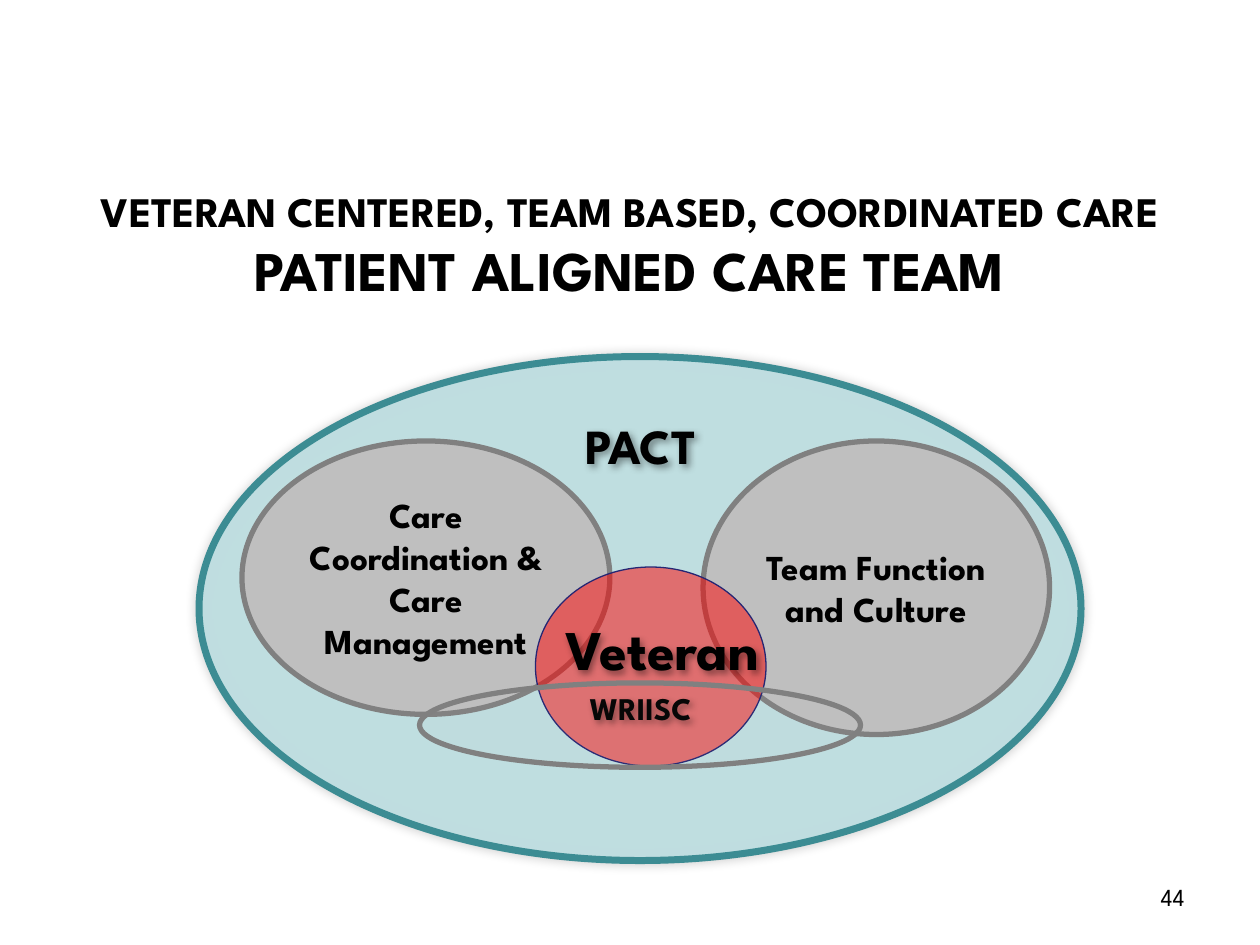
from lxml import etree
from pptx import Presentation
from pptx.dml.color import RGBColor
from pptx.enum import shapes, text
from pptx.oxml import ns
from pptx.util import Inches, Pt

FONT = "League Spartan"
BLACK = RGBColor(0x00, 0x00, 0x00)
PALE_TEAL = RGBColor(0xBB, 0xE0, 0xE3)
TEAL = RGBColor(0x3C, 0x8C, 0x93)
SILVER = RGBColor(0xBF, 0xBF, 0xBF)
GRAY = RGBColor(0x80, 0x80, 0x80)
RED = RGBColor(0xFF, 0x00, 0x00)
NAVY = RGBColor(0x26, 0x26, 0x73)


def set_all(target, values):
    for name, value in values.items():
        setattr(target, name, value)


def write(shape, lines, anchor, align=text.PP_ALIGN.CENTER, bold=True):
    frame = shape.text_frame
    set_all(frame, {"word_wrap": True, "vertical_anchor": anchor,
                    "auto_size": text.MSO_AUTO_SIZE.NONE})
    for index, (words, size) in enumerate(lines):
        para = frame.add_paragraph() if index else frame.paragraphs[0]
        set_all(para, {"alignment": align, "space_before": Pt(0)})
        span = para.add_run()
        span.text = words
        set_all(span.font, {"name": FONT, "size": Pt(size), "bold": bold})
        span.font.color.rgb = BLACK


def add_alpha(color, percent):
    etree.SubElement(color, ns.qn("a:alpha"), val=str(percent * 1000))


def add_soft_shadow(shape, alpha, blur, distance=0, angle=0):
    shape.shadow.inherit = False
    effects = shape._element.spPr.find(ns.qn("a:effectLst"))
    shadow = etree.SubElement(
        effects, ns.qn("a:outerShdw"), blurRad=str(Pt(blur)),
        dist=str(Pt(distance)), dir=str(angle * 60000), rotWithShape="0")
    color = etree.SubElement(shadow, ns.qn("a:srgbClr"), val=str(BLACK))
    add_alpha(color, alpha)


def add_ellipse(page, box, fill, line, width, alpha=100):
    ellipse = page.shapes.add_shape(shapes.MSO_SHAPE.OVAL, *map(Inches, box))
    ellipse.shadow.inherit = False
    ellipse.fill.solid()
    ellipse.fill.fore_color.rgb = fill
    if alpha < 100:
        add_alpha(ellipse._element.spPr.find(".//" + ns.qn("a:srgbClr")), alpha)
    ellipse.line.color.rgb = line
    ellipse.line.width = Pt(width)
    return ellipse


def add_label(page, box, words, size):
    label = page.shapes.add_textbox(*map(Inches, box))
    write(label, [(words, size)], text.MSO_ANCHOR.TOP)
    add_soft_shadow(label, 40, 4, 2, 45)


def place_title(page, left, top, width, height):
    title = page.shapes.title
    set_all(title, {"left": Inches(left), "top": Inches(top),
                    "width": Inches(width), "height": Inches(height)})
    write(title, [("VETERAN CENTERED, TEAM BASED, COORDINATED CARE", 24),
                  ("PATIENT ALIGNED CARE TEAM", 32)], text.MSO_ANCHOR.TOP)


def draw_care_diagram(page, left, top, width, height):
    def inside(x, y, w, h):
        return left + x, top + y, w, h

    team = add_ellipse(page, (left, top, width, height), PALE_TEAL, TEAL, 4, 83)
    add_soft_shadow(team, 20, 6)
    for box, words in (
            (inside(4, 0.67, 2.75, 2.33), "Team Function and Culture"),
            (inside(0.34, 0.67, 2.92, 2.17),
             "Care Coordination & Care Management")):
        circle = add_ellipse(page, box, SILVER, GRAY, 3)
        write(circle, [(words, 20)], text.MSO_ANCHOR.MIDDLE)
    add_ellipse(page, inside(2.67, 1.67, 1.83, 1.58), RED, NAVY, 0.75, 50)
    for x, y, h, words, size in ((1.59, 2, 0.64, "Veteran", 32),
                                 (1.42, 2.59, 0.4, "WRIISC", 18),
                                 (1.42, 0.42, 0.57, "PACT", 28)):
        add_label(page, inside(x, y, 4.17, h), words, size)
    add_ellipse(page, inside(1.75, 2.59, 3.5, 0.67), SILVER, GRAY, 3, 4)


def place_page_number(page, left, top, width, height):
    number = page.shapes.add_textbox(*map(Inches, (left, top, width, height)))
    write(number, [("44", 14)], text.MSO_ANCHOR.TOP,
          text.PP_ALIGN.RIGHT, False)


def main():
    deck = Presentation()
    set_all(deck, {"slide_width": Inches(10), "slide_height": Inches(7.5)})
    page = deck.slides.add_slide(deck.slide_layouts.get_by_name("Title Only"))
    place_page_number(page, 7.17, 6.95, 2.33, 0.4)
    place_title(page, 0, 1.42, 10, 1.04)
    draw_care_diagram(page, 1.58, 2.83, 7, 4)
    deck.save("out.pptx")


if __name__ == "__main__":
    main()
